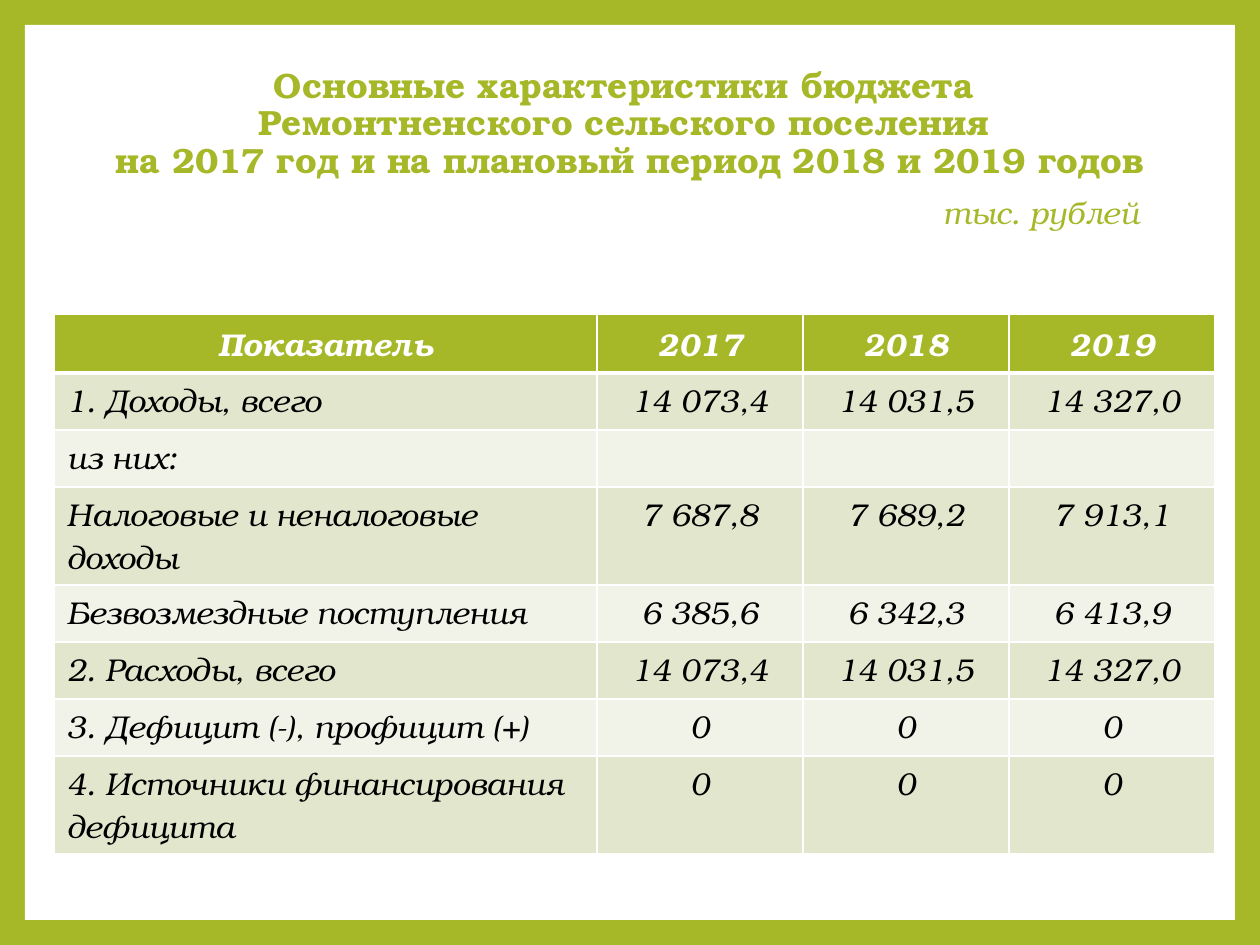
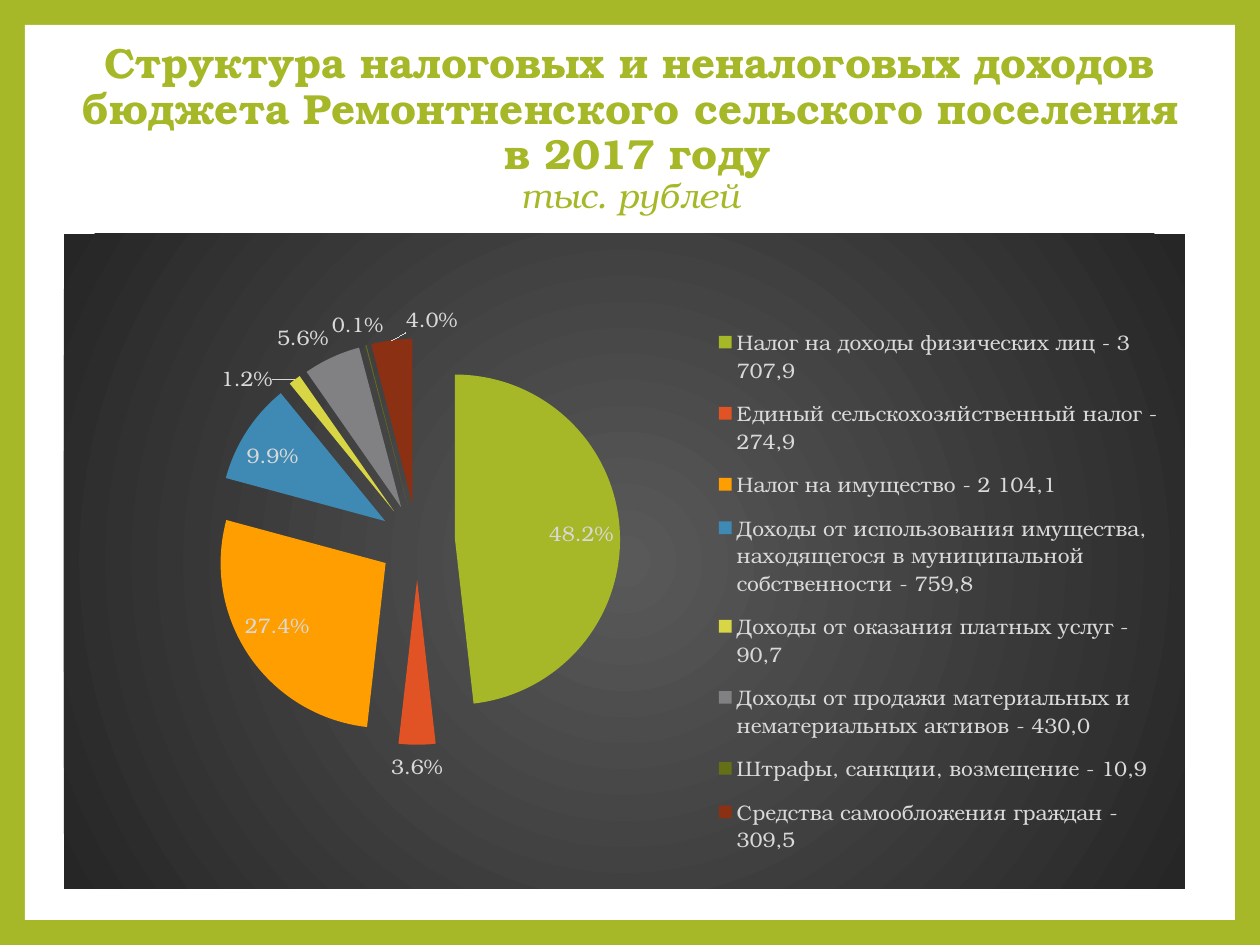
from dataclasses import dataclass

from pptx import Presentation
from pptx.chart.data import CategoryChartData
from pptx.dml.color import RGBColor
from pptx.enum.chart import XL_CHART_TYPE as ChartType
from pptx.enum.chart import XL_LABEL_POSITION as LabelPosition
from pptx.enum.chart import XL_LEGEND_POSITION as LegendPosition
from pptx.enum.shapes import MSO_SHAPE as Preset
from pptx.enum.text import MSO_ANCHOR as Anchor
from pptx.enum.text import MSO_AUTO_SIZE as AutoSize
from pptx.enum.text import PP_ALIGN as Align
from pptx.oxml import parse_xml
from pptx.oxml.ns import nsdecls, qn
from pptx.util import Pt


@dataclass(frozen=True)
class Theme:
    """Colours, font and type sizes of the deck."""
    accent: str = "A6B727"
    paper: str = "FFFFFF"
    ink: str = "000000"
    row_dark: str = "E1E6CD"
    row_light: str = "F1F3E8"
    chart_center: str = "595959"
    chart_edge: str = "262626"
    chart_text: str = "D9D9D9"
    slices: tuple = ("A6B727", "E15224", "FE9E00", "3F8AB4",
                     "D9D645", "818183", "656F16", "8B3012")
    font: str = "TeX Gyre Bonum"
    title: int = 20
    large_title: int = 24
    table: int = 18
    chart: int = 12


THEME = Theme()
PX = 914400 / 126
UNIT = "тыс. рублей"

BUDGET = [
    ("Показатель", "2017", "2018", "2019"),
    ("1. Доходы, всего", "14 073,4", "14 031,5", "14 327,0"),
    ("из них:", "", "", ""),
    ("Налоговые и неналоговые доходы", "7 687,8", "7 689,2", "7 913,1"),
    ("Безвозмездные поступления", "6 385,6", "6 342,3", "6 413,9"),
    ("2. Расходы, всего", "14 073,4", "14 031,5", "14 327,0"),
    ("3. Дефицит (-), профицит (+)", "0", "0", "0"),
    ("4. Источники финансирования дефицита", "0", "0", "0"),
]

REVENUE = {
    "Налог на доходы физических лиц - 3 707,9": 0.482,
    "Единый сельскохозяйственный налог - 274,9": 0.036,
    "Налог на имущество - 2 104,1": 0.274,
    "Доходы от использования имущества, находящегося в муниципальной "
    "собственности - 759,8": 0.099,
    "Доходы от оказания платных услуг - 90,7": 0.012,
    "Доходы от продажи материальных и нематериальных активов - 430,0": 0.056,
    "Штрафы, санкции, возмещение - 10,9": 0.001,
    "Средства самообложения граждан - 309,5": 0.04,
}


def px(*lengths):
    """Turn px lengths into a list of EMU."""
    return [round(length * PX) for length in lengths]


def paint(fill, color):
    """Give a fill one solid colour."""
    fill.solid()
    fill.fore_color.rgb = RGBColor.from_string(color)


def style(font, size, color, bold=False, italic=False):
    """Set the deck font with the given size, colour and weight."""
    font.name, font.size = THEME.font, Pt(size)
    font.bold, font.italic = bold, italic
    font.color.rgb = RGBColor.from_string(color)


def add_framed_slide(deck):
    """Add a slide with a white panel inside a green frame."""
    slide = deck.slides.add_slide(deck.slide_layouts[5])
    paint(slide.background.fill, THEME.accent)
    panel = slide.shapes.add_shape(Preset.RECTANGLE, *px(25, 25, 1210, 895))
    panel.shadow.inherit = False
    paint(panel.fill, THEME.paper)
    panel.line.fill.background()
    slide.shapes.title._element.addprevious(panel._element)
    return slide


def set_title(slide, heading, size, height, unit_size):
    """Place the heading and return the paragraph with the unit below it."""
    title = slide.shapes.title
    title.left, title.top, title.width, title.height = px(0, 55, 1260, height)
    frame = title.text_frame
    frame.auto_size, frame.word_wrap = AutoSize.NONE, True
    frame.vertical_anchor = Anchor.MIDDLE
    headline, unit = frame.paragraphs[0], frame.add_paragraph()
    headline.text, unit.text = heading, UNIT
    for line in (headline, unit):
        line.alignment, line.line_spacing = Align.CENTER, 0.9
    style(headline.font, size, THEME.accent, bold=True)
    style(unit.font, unit_size, THEME.accent, italic=True)
    return unit


def set_borders(cell, bottom):
    """Draw white cell borders with the given bottom width in points."""
    properties = cell._tc.get_or_add_tcPr()
    for side, width in (("L", 1), ("R", 1), ("T", 1), ("B", bottom)):
        properties.append(parse_xml(
            f'<a:ln{side} {nsdecls("a")} w="{Pt(width)}"><a:solidFill>'
            f'<a:srgbClr val="{THEME.paper}"/></a:solidFill></a:ln{side}>'))


def fill_cell(cell, text, is_header, is_label, color):
    """Write and format one cell of the budget table."""
    set_borders(cell, 3 if is_header else 1)
    paint(cell.fill, color)
    cell.text = text
    entry = cell.text_frame.paragraphs[0]
    entry.alignment = Align.LEFT if is_label and not is_header else Align.CENTER
    style(entry.font, THEME.table, THEME.paper if is_header else THEME.ink,
          bold=is_header, italic=True)


def add_budget_table(slide, rows):
    """Add the table of budget indicators by year."""
    widths = px(543, 206, 206, 206)
    table = slide.shapes.add_table(
        len(rows), len(widths), *px(54, 314, 1161, 57 * len(rows))).table
    for column, width in zip(table.columns, widths):
        column.width = width
    for r, row in enumerate(rows):
        band = THEME.row_dark if r % 2 else THEME.row_light
        for c, text in enumerate(row):
            fill_cell(table.cell(r, c), text, r == 0, c == 0,
                      band if r else THEME.accent)


def make_layout(x, y, w, h, target=""):
    """Build a manual chart layout from fractions of the chart."""
    places = "".join(f'<c:{key} val="{value}"/>'
                     for key, value in zip("xywh", (x, y, w, h)))
    return parse_xml(
        f'<c:layout {nsdecls("c")}><c:manualLayout>{target}'
        f'<c:xMode val="edge"/><c:yMode val="edge"/>{places}'
        '</c:manualLayout></c:layout>')


def clear_layout(parent):
    """Remove the automatic layout of a chart part."""
    for layout in parent.findall(qn("c:layout")):
        parent.remove(layout)


def set_chart_backdrop(chart):
    """Fill the chart area with a dark round gradient."""
    stops = "".join(
        f'<a:gs pos="{place}"><a:srgbClr val="{color}"/></a:gs>'
        for place, color in ((0, THEME.chart_center), (100000, THEME.chart_edge)))
    chart._chartSpace.find(qn("c:chart")).addnext(parse_xml(
        f'<c:spPr {nsdecls("c", "a")}><a:gradFill><a:gsLst>{stops}</a:gsLst>'
        '<a:path path="circle"><a:fillToRect l="50000" t="50000" r="50000" '
        'b="50000"/></a:path></a:gradFill><a:ln><a:noFill/></a:ln></c:spPr>'))


def set_legend(chart):
    """Place the legend to the right of the pie."""
    chart.has_legend = True
    legend = chart.legend
    legend.position = LegendPosition.RIGHT
    legend.include_in_layout = False
    style(legend.font, THEME.chart, THEME.chart_text)
    clear_layout(legend._element)
    legend._element.find(qn("c:legendPos")).addnext(
        make_layout(0.58, 0.12, 0.4, 0.85))


def format_slices(series):
    """Pull the slices apart, colour them and show their shares."""
    series._element.find(qn("c:tx")).addnext(
        parse_xml(f'<c:explosion {nsdecls("c")} val="23"/>'))
    for index, color in enumerate(THEME.slices):
        paint(series.points[index].format.fill, color)
    shares = series.data_labels
    shares.show_value = True
    shares.number_format, shares.number_format_is_linked = "0.0%", False
    shares.position = LabelPosition.BEST_FIT
    style(shares.font, THEME.chart, THEME.chart_text)


def add_revenue_pie(slide, revenue):
    """Add the pie of revenue sources."""
    data = CategoryChartData(number_format="0.0%")
    data.categories = list(revenue)
    data.add_series("Series 1", list(revenue.values()))
    chart = slide.shapes.add_chart(
        ChartType.PIE, *px(64, 234, 1121, 655), data).chart
    chart.has_title = False
    style(chart.font, THEME.chart, THEME.chart_text)
    set_chart_backdrop(chart)
    set_legend(chart)
    pie = chart.plots[0]
    pie.vary_by_categories = True
    format_slices(pie.series[0])
    plot_area = pie._element.getparent()
    clear_layout(plot_area)
    plot_area.insert(0, make_layout(0.03, 0.16, 0.57, 0.62,
                                    '<c:layoutTarget val="inner"/>'))


def build_budget_slide(deck):
    """Build the slide with the main budget figures."""
    slide = add_framed_slide(deck)
    unit = set_title(
        slide,
        "Основные характеристики бюджета \vРемонтненского сельского поселения "
        "\vна 2017 год и на плановый период 2018 и 2019 годов",
        THEME.title, 189, THEME.table)
    unit.alignment, unit.space_before = Align.LEFT, Pt(9)
    unit._p.get_or_add_pPr().set("marL", str(px(930)[0]))
    add_budget_table(slide, BUDGET)


def build_revenue_slide(deck):
    """Build the slide with the revenue structure."""
    slide = add_framed_slide(deck)
    set_title(
        slide,
        "Структура налоговых и неналоговых доходов бюджета Ремонтненского "
        "сельского поселения\v в 2017 году",
        THEME.large_title, 149, THEME.title)
    add_revenue_pie(slide, REVENUE)


def main():
    """Build and save the deck."""
    deck = Presentation()
    deck.slide_width, deck.slide_height = px(1260, 945)
    build_budget_slide(deck)
    build_revenue_slide(deck)
    deck.save("out.pptx")


if __name__ == "__main__":
    main()
